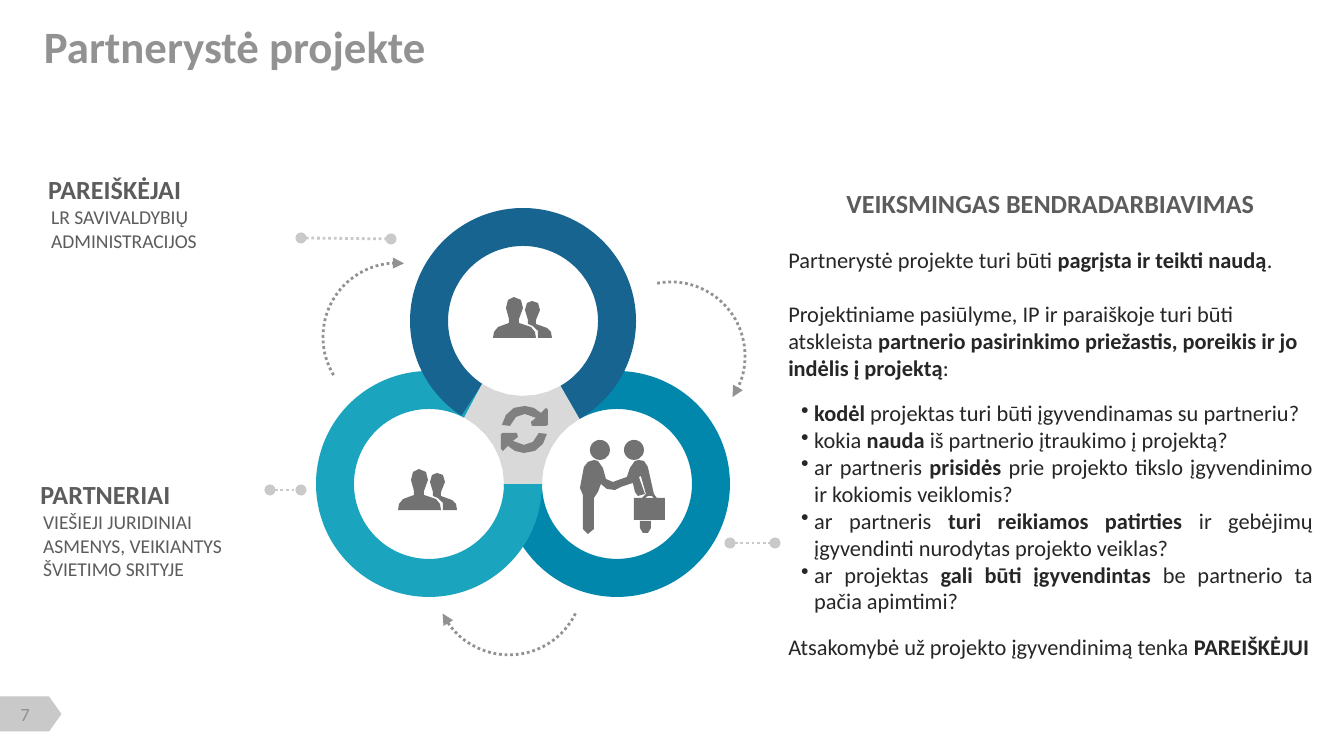
from dataclasses import dataclass
from math import cos, radians, sin

from lxml.etree import SubElement
from pptx import Presentation
from pptx.dml.color import RGBColor as Rgb
from pptx.enum.dml import MSO_LINE as Dash
from pptx.enum.shapes import MSO_CONNECTOR as Conn, MSO_SHAPE as Geo
from pptx.enum.text import MSO_ANCHOR as Anchor, PP_ALIGN as Align
from pptx.oxml.ns import qn
from pptx.util import Pt

PX = 914400 / 134.4
FONT = "Calibri"
COLORS = {
    "top": "176490", "left": "1AA4BE", "right": "0187AC", "hub": "D9D9D9",
    "sync": "808080", "icon": "727272", "arrow": "929292", "dots": "C9C9C9",
    "muted": "929292", "label": "5C5C5C", "body": "262626",
}
R_OUT, R_IN = 113, 75
Points = list[tuple[float, float]]


@dataclass
class Ring:
    color: str
    x: int
    y: int
    start: int
    end: int


@dataclass
class Arrow:
    x: int
    y: int
    rot: int
    start: float
    end: float


@dataclass
class Link:
    x1: int
    y1: int
    x2: int
    y2: int


@dataclass
class Label:
    x: int
    y: int
    w: int
    title: str
    text: str


@dataclass
class Para:
    runs: list[tuple[str, bool]]
    size: float = 12
    color: str = "body"
    align: Align = Align.LEFT
    before: float = 0
    margin: int = 0
    hang: int = 0


RINGS = [Ring("right", 617, 484, 240, 180), Ring("left", 429, 484, 0, 298),
         Ring("top", 523, 321, 123, 60)]
ARROWS = [Arrow(597, 282, 0, 155.51, 20.3), Arrow(323, 263, 239, 162, 21.86),
          Arrow(435, 507, 120, 159.67, 20.3)]
LINKS = [Link(301, 238, 391, 239), Link(270, 490, 301, 490), Link(730, 543, 775, 543)]
LABELS = [Label(11, 167, 271, "PAREIŠKĖJAI", "LR SAVIVALDYBIŲ ADMINISTRACIJOS"),
          Label(3, 472, 261, "PARTNERIAI", "VIEŠIEJI JURIDINIAI ASMENYS, VEIKIANTYS ŠVIETIMO SRITYJE")]
QUESTIONS = [
    [("kodėl", True), (" projektas turi būti įgyvendinamas su partneriu?", False)],
    [("kokia ", False), ("nauda", True), (" iš partnerio įtraukimo į projektą?", False)],
    [("ar partneris ", False), ("prisidės", True),
     (" prie projekto tikslo įgyvendinimo ir kokiomis veiklomis?", False)],
    [("ar partneris ", False), ("turi reikiamos patirties ", True),
     ("ir gebėjimų įgyvendinti nurodytas projekto veiklas?", False)],
    [("ar projektas ", False), ("gali būti įgyvendintas ", True),
     ("be partnerio ta pačia apimtimi?", False)],
]
FRONT = [(21, 0), (15, 3), (13, 11), (16, 22), (16, 26), (5, 30), (1, 35), (0, 41),
         (43, 41), (42, 35), (38, 30), (26, 26), (26, 22), (30, 11), (28, 3)]
BACK = [(45, 41), (59, 41), (58, 35), (54, 31), (43, 27), (43, 23), (47, 13), (45, 6),
        (39, 4), (34, 6), (32, 13), (35, 23), (35, 27), (40, 29), (45, 34)]
SYNC = [(46, 28), (42, 38), (34, 45), (23, 47), (14, 45), (7, 40), (2, 45), (0, 43),
        (0, 28), (2, 27), (16, 27), (17, 31), (12, 35), (23, 39), (32, 36), (38, 27)]
SHAKE = [(78, 38), (75, 34), (69, 7), (65, 1), (60, 0), (56, 1), (51, 8), (48, 17),
         (34, 22), (27, 19), (24, 8), (19, 1), (15, 0), (9, 2), (5, 7), (1, 28),
         (4, 35), (4, 69), (9, 74), (15, 69), (15, 38), (19, 32), (22, 24),
         (28, 29), (36, 30), (42, 27), (54, 23), (56, 32), (59, 36), (66, 34), (60, 17),
         (62, 16), (67, 34), (63, 38), (55, 38), (55, 60), (86, 60), (86, 38)]
HANDLE = [(66, 38), (69, 36), (73, 36), (75, 38)]
LEG = [(0, 0), (11, 0), (11, 7), (8, 12), (3, 12), (0, 7)]


def emu(px: float) -> int:
    return round(px * PX)


def rgb(name: str) -> Rgb:
    return Rgb.from_string(COLORS[name])


def arc(ring: Ring, start: int, end: int, steps: int = 6) -> Points:
    angles = [radians(start + (end - start) * i / steps) for i in range(steps + 1)]
    return [(ring.x + R_IN * cos(a), ring.y + R_IN * sin(a)) for a in angles]


def fill(sp, color: str) -> None:
    sp.shadow.inherit = False
    sp.fill.solid()
    sp.fill.fore_color.rgb = rgb(color)
    sp.line.fill.background()


def outline(shapes, contours: list[Points], color: str, x: int = 0, y: int = 0) -> None:
    paths = [[(emu(x + a), emu(y + b)) for a, b in c] for c in contours]
    fb = shapes.build_freeform(*paths[0][0])
    fb.add_line_segments(paths[0][1:])
    for path in paths[1:]:
        fb.move_to(*path[0])
        fb.add_line_segments(path[1:])
    fill(fb.convert_to_shape(), color)


def preset(shapes, geo: Geo, x: int, y: int, w: int, h: int, color: str):
    sp = shapes.add_shape(geo, emu(x), emu(y), emu(w), emu(h))
    fill(sp, color)
    return sp


def draw_ring(shapes, ring: Ring) -> None:
    size = 2 * R_OUT
    sp = preset(shapes, Geo.BLOCK_ARC, ring.x - R_OUT, ring.y - R_OUT, size, size, ring.color)
    sp.adjustments[0] = ring.start * 0.6
    sp.adjustments[1] = ring.end * 0.6
    sp.adjustments[2] = (R_OUT - R_IN) / size


def dotted(sp, color: str, **ends: str) -> None:
    sp.line.color.rgb = rgb(color)
    sp.line.width = Pt(1.5)
    sp.line.dash_style = Dash.ROUND_DOT
    ln = sp.line._get_or_add_ln()
    for tag, kind in ends.items():
        SubElement(ln, qn(f"a:{tag}"), type=kind)


def draw_arrow(shapes, arrow: Arrow) -> None:
    sp = shapes.add_shape(Geo.ARC, emu(arrow.x), emu(arrow.y), emu(148), emu(148))
    sp.adjustments[0], sp.adjustments[1] = arrow.start, arrow.end
    sp.rotation = arrow.rot
    sp.shadow.inherit = False
    sp.fill.background()
    dotted(sp, "arrow", tailEnd="triangle")


def draw_link(shapes, link: Link) -> None:
    sp = shapes.add_connector(Conn.STRAIGHT, emu(link.x1), emu(link.y1), emu(link.x2), emu(link.y2))
    dotted(sp, "dots", headEnd="oval", tailEnd="oval")
    SubElement(sp._element.spPr, qn("a:effectLst"))


def add_text(shapes, x: int, y: int, w: int, h: int, paras: list[Para]):
    tf = shapes.add_textbox(emu(x), emu(y), emu(w), emu(h)).text_frame
    tf.word_wrap = True
    for i, para in enumerate(paras):
        p = tf.add_paragraph() if i else tf.paragraphs[0]
        p.alignment = para.align
        if para.before:
            p.space_before = Pt(para.before)
        pPr = p._p.get_or_add_pPr()
        pPr.set("marL", str(emu(para.margin)))
        pPr.set("indent", str(emu(-para.hang)))
        if para.hang:
            SubElement(pPr, qn("a:buChar"), char="•")
        for text, bold in para.runs:
            r = p.add_run()
            r.text = text
            r.font.name, r.font.size, r.font.bold = FONT, Pt(para.size), bold
            r.font.color.rgb = rgb(para.color)
    return tf


def main() -> None:
    prs = Presentation()
    prs.slide_width, prs.slide_height = emu(1344), emu(756)
    s = prs.slides.add_slide(prs.slide_layouts[6]).shapes

    preset(s, Geo.FLOWCHART_OFFPAGE_CONNECTOR, 13, 683, 35, 62, "dots").rotation = 270
    tf = add_text(s, 3, 703, 44, 23, [Para([("7", False)], 10, "muted", Align.CENTER)])
    tf.margin_left = tf.margin_right = tf.margin_top = tf.margin_bottom = 0
    tf.vertical_anchor = Anchor.MIDDLE
    tf = add_text(s, 44, 20, 661, 52, [Para([("Partnerystė projekte", True)], 24, "muted")])
    tf.margin_left = 0
    tf.vertical_anchor = Anchor.MIDDLE

    for ring in RINGS:
        draw_ring(s, ring)
    right, left, top = RINGS
    outline(s, [arc(top, 60, 123) + arc(left, 298, 360) + arc(right, 180, 240)], "hub")
    outline(s, [SYNC, [(47 - x, 47 - y) for x, y in SYNC]], "sync", 501, 406)

    for arrow in ARROWS:
        draw_arrow(s, arrow)
    for label in LABELS:
        add_text(s, label.x, label.y, label.w, 117, [
            Para([(label.title, True)], 14, "label", margin=24),
            Para([(label.text, False)], 10.5, "label", margin=27)])
    for link in LINKS:
        draw_link(s, link)

    paras = [
        Para([("VEIKSMINGAS BENDRADARBIAVIMAS", True)], 14, "label", Align.CENTER),
        Para([("Partnerystė projekte turi būti ", False),
              ("pagrįsta ir teikti naudą", True), (".", False)], before=14.65),
        Para([("Projektiniame pasiūlyme, IP ir paraiškoje turi būti atskleista ", False),
              ("partnerio pasirinkimo priežastis, poreikis ir jo indėlis į projektą", True),
              (":", False)], before=14.65)]
    paras += [Para(runs, align=Align.JUSTIFY, before=0 if i else 9.75, margin=26, hang=13)
              for i, runs in enumerate(QUESTIONS)]
    paras.append(Para([("Atsakomybė už projekto įgyvendinimą tenka ", False),
                       ("PAREIŠKĖJUI", True)], before=9.75))
    add_text(s, 775, 181, 551, 531, paras)

    for x, y in [(493, 297), (398, 469)]:
        outline(s, [FRONT, BACK], "icon", x, y)
    for x in (590, 624):
        preset(s, Geo.OVAL, x, 440, 20, 20, "icon")
    outline(s, [LEG], "icon", 640, 521)
    outline(s, [SHAKE, HANDLE], "icon", 579, 460)

    prs.save("out.pptx")


if __name__ == "__main__":
    main()
